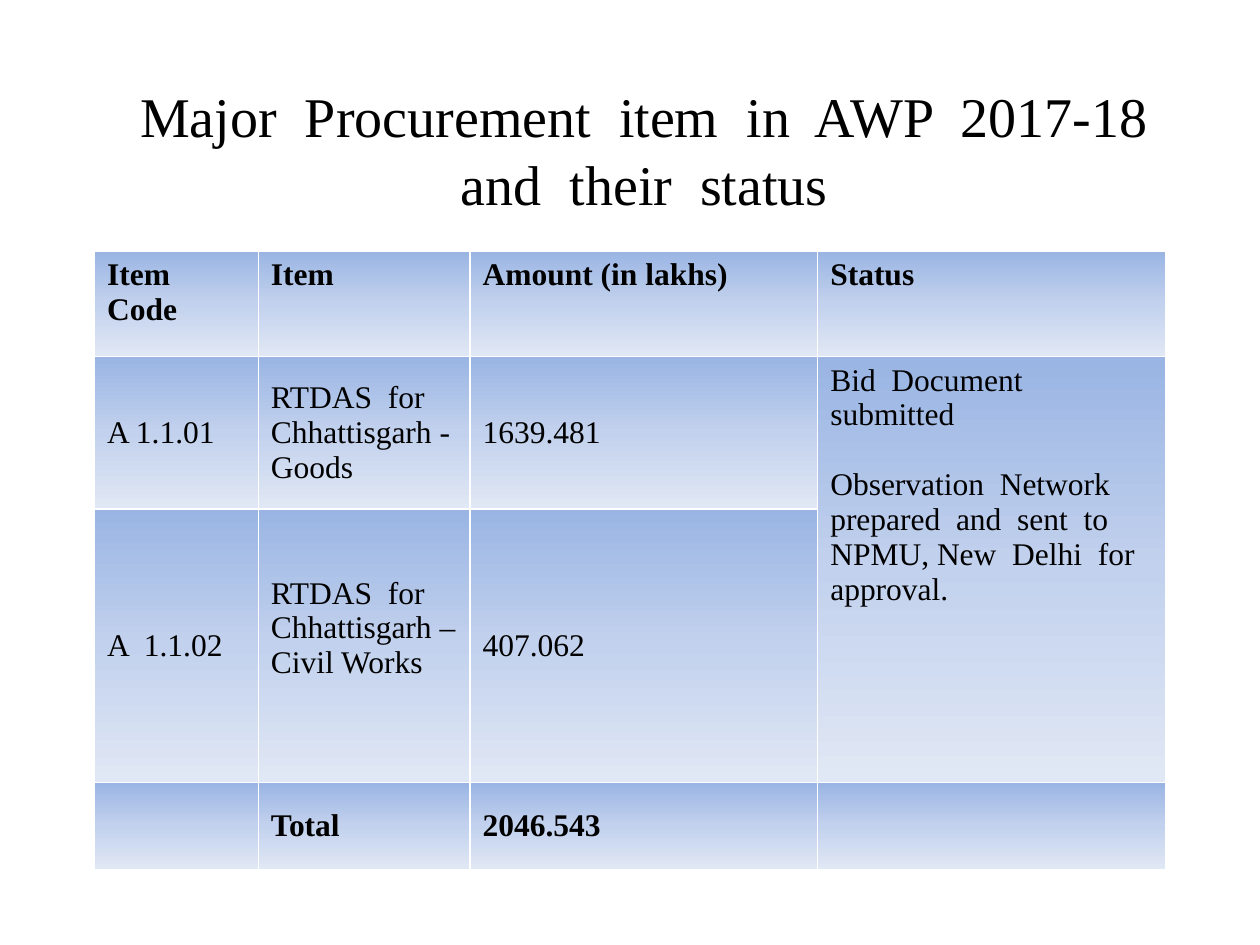
from dataclasses import dataclass

from lxml.etree import SubElement
from pptx import Presentation
from pptx.dml.color import RGBColor
from pptx.enum.text import MSO_ANCHOR, PP_ALIGN
from pptx.oxml.ns import qn
from pptx.util import Pt

COLORS = {"ink": "000000", "top": "9AB5E4", "mid": "C2D1ED", "low": "E1E8F5"}
STOPS = ((0, "top"), (50, "mid"), (100, "low"))
FONT = "Times New Roman"
WIDTHS = (93.6, 121, 198.7, 198.7)
HEIGHTS = (60.5, 87.1, 156.2, 49.7)
LINE = 20


@dataclass(frozen=True)
class Entry:
    row: int
    col: int
    lines: tuple[str, ...]
    bold: bool = False
    middle: bool = True
    lift: float = 0


HEADS = ("Item  Code", "Item", "Amount (in lakhs)", "Status")
ENTRIES = [Entry(0, col, (head,), True, False) for col, head in enumerate(HEADS)] + [
    Entry(1, 0, ("A 1.1.01",)),
    Entry(1, 1, ("RTDAS  for  Chhattisgarh - Goods",)),
    Entry(1, 2, ("1639.481",)),
    Entry(1, 3, (
        "Bid  Document  submitted",
        "Observation  Network prepared  and  sent  to  NPMU, New  Delhi  for  approval.",
    ), middle=False),
    Entry(2, 0, ("A  1.1.02",)),
    Entry(2, 1, ("RTDAS  for  Chhattisgarh – Civil Works",), lift=LINE),
    Entry(2, 2, ("407.062",)),
    Entry(3, 1, ("Total",), True),
    Entry(3, 2, ("2046.543",), True),
]


def add_run(para, text: str, size: float, bold: bool = False) -> None:
    run = para.add_run()
    run.text = text
    run.font.name = FONT
    run.font.size = Pt(size)
    run.font.bold = bold
    run.font.color.rgb = RGBColor.from_string(COLORS["ink"])


def shade(cell) -> None:
    cell.fill.gradient()
    cell.fill.gradient_angle = 270
    stops = cell.fill.gradient_stops
    group = next(cell._tc.tcPr.iter(qn("a:gsLst")))
    for stop in list(group):
        group.remove(stop)
    for place, name in STOPS:
        stop = SubElement(group, qn("a:gs"), pos=str(place * 1000))
        SubElement(stop, qn("a:srgbClr"), val=COLORS[name])


def write(cell, entry: Entry) -> None:
    cell.vertical_anchor = MSO_ANCHOR.MIDDLE if entry.middle else MSO_ANCHOR.TOP
    cell.margin_bottom = Pt(3.6 + entry.lift)
    frame = cell.text_frame
    for index, line in enumerate(entry.lines):
        para = frame.add_paragraph() if index else frame.paragraphs[0]
        if index:
            para.space_before = Pt(LINE)
        add_run(para, line, 18, entry.bold)


def add_grid(slide) -> None:
    frame = slide.shapes.add_table(
        len(HEIGHTS), len(WIDTHS), Pt(54), Pt(143.3), Pt(sum(WIDTHS)), Pt(sum(HEIGHTS))
    )
    table = frame.table
    table.horz_banding = False
    for col, width in zip(table.columns, WIDTHS):
        col.width = Pt(width)
    for row, height in zip(table.rows, HEIGHTS):
        row.height = Pt(height)
    for cell in table.iter_cells():
        shade(cell)
    table.cell(1, 3).merge(table.cell(2, 3))
    for entry in ENTRIES:
        write(table.cell(entry.row, entry.col), entry)


def add_title(slide) -> None:
    box = slide.shapes.add_textbox(Pt(70.6), Pt(43.2), Pt(595.4), Pt(85))
    box.text_frame.word_wrap = True
    para = box.text_frame.paragraphs[0]
    para.alignment = PP_ALIGN.CENTER
    para.line_spacing = Pt(38.4)
    add_run(para, "Major  Procurement  item  in  AWP  2017-18  and  their  status ", 32)


def main() -> None:
    deck = Presentation()
    deck.slide_width, deck.slide_height = Pt(720), Pt(540)
    slide = deck.slides.add_slide(deck.slide_layouts[6])
    add_grid(slide)
    add_title(slide)
    deck.save("out.pptx")


if __name__ == "__main__":
    main()
